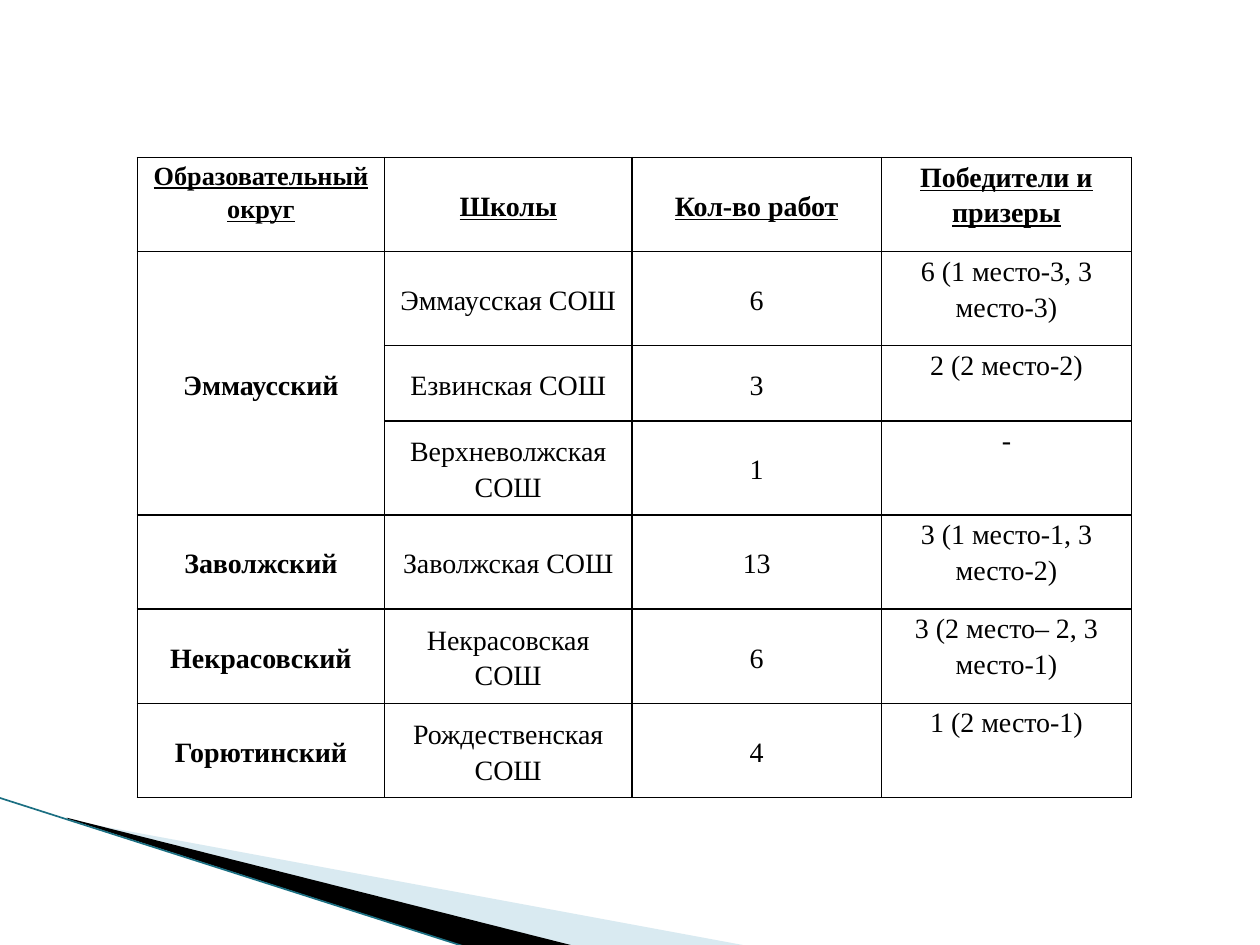
import pptx
import pptx.util
import pptx.dml.color
import pptx.enum.shapes
import pptx.enum.text
import pptx.oxml
import pptx.oxml.ns
import lxml.etree

Inches = pptx.util.Inches
Pt = pptx.util.Pt
RGBColor = pptx.dml.color.RGBColor
qn = pptx.oxml.ns.qn
ANCHOR = pptx.enum.text.MSO_ANCHOR
BLACK = RGBColor(0x00, 0x00, 0x00)
PALE_BLUE = RGBColor(0xA0, 0xCB, 0xDC)
TEAL = RGBColor(0x1B, 0x6F, 0x82)

COLUMN_SHARES = [1.96, 1.96, 1.98, 1.98]
ROW_SHARES = [0.75, 0.75, 0.6, 0.75, 0.75, 0.75, 0.75]
ROWS = [
    ["Образовательный округ", "Школы", "Кол-во работ", "Победители и призеры"],
    ["Эммаусский", "Эммаусская СОШ", "6", "6 (1 место-3, 3 место-3)"],
    ["", "Езвинская СОШ", "3", "2 (2 место-2)"],
    ["", "Верхневолжская СОШ", "1", "-"],
    ["Заволжский", "Заволжская СОШ", "13", "3 (1 место-1, 3 место-2)"],
    ["Некрасовский", "Некрасовская СОШ", "6", "3 (2 место– 2, 3 место-1)"],
    ["Горютинский", "Рождественская СОШ", "4", "1 (2 место-1)"],
]


def set_values(target, values):
    for name, value in values.items():
        setattr(target, name, value)


def add_wedge(page, box, points, color, opacity=None):
    left, top, width, height = (Inches(value) for value in box)
    corners = [(left + Inches(x), top + Inches(y)) for x, y in points]
    builder = page.shapes.build_freeform(*corners[0])
    builder.add_line_segments(corners[1:], close=True)
    wedge = builder.convert_to_shape()
    outline = wedge._element.spPr.find(".//" + qn("a:path"))
    outline.set("w", str(width))
    outline.set("h", str(height))
    for point, (x, y) in zip(outline.iter(qn("a:pt")), corners):
        point.set("x", str(x - left))
        point.set("y", str(y - top))
    set_values(wedge, {"left": left, "top": top, "width": width, "height": height})
    wedge.shadow.inherit = False
    wedge.fill.solid()
    wedge.fill.fore_color.rgb = color
    wedge.line.fill.background()
    if opacity is not None:
        shade = wedge.fill._xPr.find(qn("a:solidFill"))[0]
        lxml.etree.SubElement(shade, qn("a:alpha"), val=str(opacity * 1000))


def add_corner(page, left, top):
    add_wedge(page, (left + 0.78, top - 0.86, 4.16, 1.58),
              [(-0.23, 1.04), (5.17, 2.04), (3.78, 2.04), (-0.23, 1.03)], PALE_BLUE, 40)
    add_wedge(page, (left - 0.06, top, 4.16, 0.92),
              [(0.59, 0.16), (4.63, 1.18), (3.78, 1.19), (0.6, 0.17)], BLACK)
    edge = page.shapes.add_connector(
        pptx.enum.shapes.MSO_CONNECTOR.STRAIGHT,
        Inches(left - 0.01), Inches(top), Inches(left + 3.71), Inches(top + 1.19))
    edge.line.color.rgb = TEAL
    edge.line.width = Pt(0.95)
    lxml.etree.SubElement(edge._element.spPr, qn("a:effectLst"))


def add_borders(cell):
    properties = cell._tc.get_or_add_tcPr()
    for side in ("lnL", "lnR", "lnT", "lnB"):
        border = lxml.etree.SubElement(properties, qn("a:" + side), w=str(Pt(1)))
        fill = lxml.etree.SubElement(border, qn("a:solidFill"))
        lxml.etree.SubElement(fill, qn("a:srgbClr"), val=str(BLACK))


def fill_cell(cell, text, row, column):
    top_aligned = column == 3 or (row, column) == (0, 0)
    set_values(cell, {
        "margin_left": Inches(0.07), "margin_right": Inches(0.07),
        "margin_top": 0, "margin_bottom": 0,
        "vertical_anchor": ANCHOR.TOP if top_aligned else ANCHOR.MIDDLE,
    })
    add_borders(cell)
    cell.fill.background()
    para = cell.text_frame.paragraphs[0]
    set_values(para, {"alignment": pptx.enum.text.PP_ALIGN.CENTER, "line_spacing": 1.15})
    if text:
        span = para.add_run()
        span.text = text
        set_values(span.font, {
            "name": "Times New Roman",
            "size": Pt(15 if (row, column) == (0, 0) else 16),
            "bold": row == 0 or column == 0,
            "underline": row == 0,
        })
        span.font.color.rgb = BLACK


def add_results(page, left, top, width, height):
    frame = page.shapes.add_table(
        len(ROWS), len(COLUMN_SHARES),
        Inches(left), Inches(top), Inches(width), Inches(height))
    table = frame.table
    set_values(table, {"first_row": False, "horz_banding": False})
    for column, share in zip(table.columns, COLUMN_SHARES):
        column.width = Inches(width * share / sum(COLUMN_SHARES))
    for row, share in zip(table.rows, ROW_SHARES):
        row.height = Inches(height * share / sum(ROW_SHARES))
    for row, texts in enumerate(ROWS):
        for column, text in enumerate(texts):
            fill_cell(table.cell(row, column), text, row, column)
    table.cell(1, 0).merge(table.cell(3, 0))


def main():
    deck = pptx.Presentation()
    set_values(deck, {"slide_width": Inches(10), "slide_height": Inches(7.5)})
    page = deck.slides.add_slide(deck.slide_layouts[6])
    add_corner(page, 0, 6.33)
    add_results(page, 1.09, 1.25, 7.89, 5.08)
    deck.save("out.pptx")


if __name__ == "__main__":
    main()
